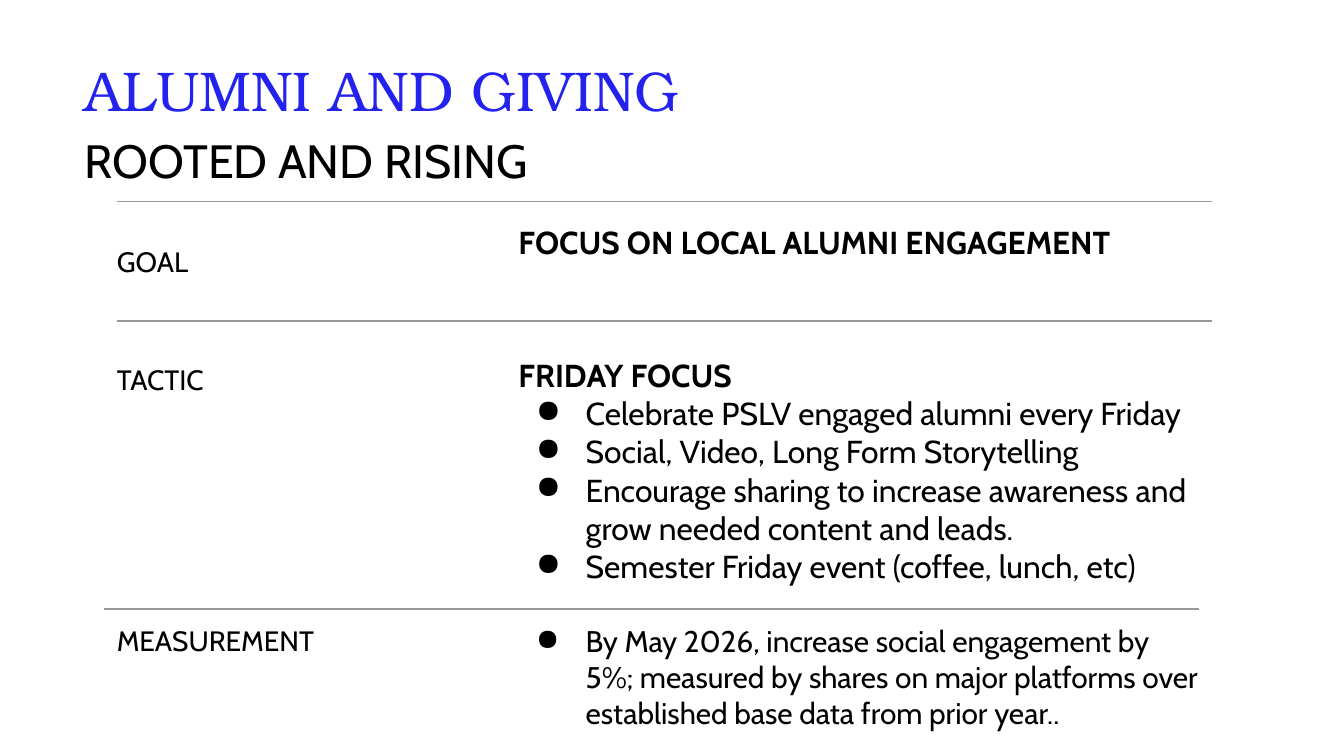
from pptx import Presentation
from pptx.dml.color import RGBColor
from pptx.enum.shapes import MSO_CONNECTOR
from pptx.enum.text import MSO_ANCHOR
from pptx.oxml.ns import qn
from pptx.util import Cm, Pt
from lxml import etree

LINE = MSO_CONNECTOR.STRAIGHT
TOP = MSO_ANCHOR.TOP
INK, BLUE, GRAY = "000000", "2322EF", "999999"
BODY, SERIF = "Cabin", "TeX Gyre Bonum"
PAD = Cm(0.25)
FRAME = {
    "word_wrap": True,
    "vertical_anchor": TOP,
    "margin_left": PAD,
    "margin_right": PAD,
    "margin_top": PAD,
    "margin_bottom": PAD,
}

ROWS = [
    {
        "rule": (2.21, 3.81),
        "label": ("GOAL", 4.37),
        "box": (9.55, 3.96, 13.36, 1.96),
        "head": "FOCUS ON LOCAL ALUMNI ENGAGEMENT",
        "items": [],
        "size": 17,
    },
    {
        "rule": (2.21, 6.07),
        "label": ("TACTIC", 6.6),
        "box": (9.55, 6.48, 13.54, 4.57),
        "head": "FRIDAY FOCUS",
        "items": [
            "Celebrate PSLV engaged alumni every Friday",
            "Social, Video, Long Form Storytelling",
            "Encourage sharing to increase awareness and grow needed content and leads.",
            "Semester Friday event (coffee, lunch, etc)",
        ],
        "size": 17,
    },
    {
        "rule": (1.96, 11.51),
        "label": ("MEASUREMENT", 11.53),
        "box": (9.55, 11.53, 13.36, 0.91),
        "head": "",
        "items": [
            "By May 2026, increase social engagement by 5%; measured by shares on "
            "major platforms over established base data from prior year.."
        ],
        "size": 16,
    },
]


def tint(color, code):
    color.rgb = RGBColor.from_string(code)


def apply(target, values):
    for name, value in values.items():
        setattr(target, name, value)


def add_dot(para):
    props = para._p.get_or_add_pPr()
    props.set("marL", str(Cm(1.27)))
    props.set("indent", str(-Cm(0.94)))
    color = etree.SubElement(props, qn("a:buClr"))
    etree.SubElement(color, qn("a:srgbClr"), val=INK)
    etree.SubElement(props, qn("a:buChar"), char="●")


def add_text(slide, box, lines, size, face=BODY, code=INK):
    frame = slide.shapes.add_textbox(*map(Cm, box)).text_frame
    apply(frame, FRAME)
    for i, (text, bold, dot) in enumerate(lines):
        para = frame.add_paragraph() if i else frame.paragraphs[0]
        if dot:
            add_dot(para)
        run = para.add_run()
        run.text = text
        apply(run.font, {"name": face, "size": Pt(size), "bold": bold})
        tint(run.font.color, code)


def add_rule(slide, left, top, width):
    rule = slide.shapes.add_connector(
        LINE, Cm(left), Cm(top), Cm(left + width), Cm(top)
    )
    rule.line.width = Pt(0.75)
    tint(rule.line.color, GRAY)
    etree.SubElement(rule._element.spPr, qn("a:effectLst"))


def add_header(slide, left, top):
    title = [("ALUMNI AND GIVING", False, False)]
    theme = [("ROOTED AND RISING", False, False)]
    add_text(slide, (left, top, 14.81, 0.74), title, 30, SERIF, BLUE)
    add_text(slide, (left, top + 1.43, 13.54, 1.04), theme, 25)


def add_row(slide, row):
    add_rule(slide, *row["rule"], 20.7)
    label, top = row["label"]
    add_text(slide, (1.96, top, 5.66, 1.05), [(label, False, False)], 15)
    lines = [(row["head"], True, False)] if row["head"] else []
    lines += [(item, False, True) for item in row["items"]]
    add_text(slide, row["box"], lines, row["size"])


def main():
    deck = Presentation()
    apply(deck, {"slide_width": Cm(25.4), "slide_height": Cm(14.29)})
    slide = deck.slides.add_slide(deck.slide_layouts[6])
    add_header(slide, 1.35, 0.81)
    for row in ROWS:
        add_row(slide, row)
    deck.save("out.pptx")


if __name__ == "__main__":
    main()
